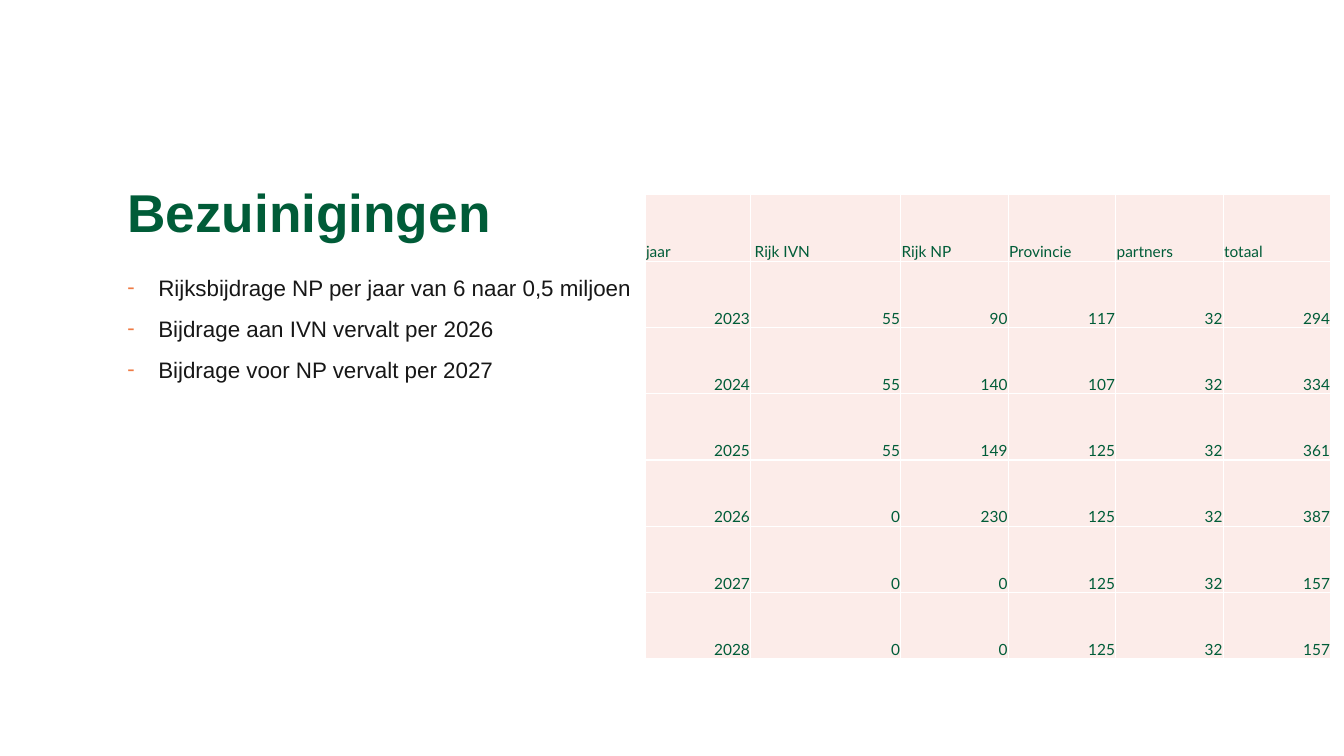
from lxml.etree import SubElement
from pptx import Presentation
from pptx.dml.color import RGBColor
from pptx.enum.text import MSO_ANCHOR as ANCHOR, PP_ALIGN as ALIGN
from pptx.oxml.ns import qn
from pptx.util import Cm, Pt

COLORS = {"green": "005C38", "text": "171717", "orange": "EF7B45",
          "cell": "FCECE9", "border": "FFFFFF"}

POINTS = ["Rijksbijdrage NP per jaar van 6 naar 0,5 miljoen",
          "Bijdrage aan IVN vervalt per 2026",
          "Bijdrage voor NP vervalt per 2027"]

BUDGET = [["jaar", "Rijk IVN", "Rijk NP", "Provincie", "partners", "totaal"],
          [2023, 55, 90, 117, 32, 294],
          [2024, 55, 140, 107, 32, 334],
          [2025, 55, 149, 125, 32, 361],
          [2026, 0, 230, 125, 32, 387],
          [2027, 0, 0, 125, 32, 157],
          [2028, 0, 0, 125, 32, 157]]
COL_WIDTHS = [2.66, 3.78] + [2.71] * 4
ROW_HEIGHT = 1.67


def write(p, text, size=16, font="Arial", color="text", bold=False, align=ALIGN.LEFT):
    p.alignment = align
    r = p.add_run()
    r.text = text
    r.font.size = Pt(size)
    r.font.name = font
    r.font.bold = bold
    r.font.color.rgb = RGBColor.from_string(COLORS[color])


def add_title(s, text):
    title = s.shapes.title
    title.left, title.top, title.width, title.height = Cm(2.95), Cm(3.43), Cm(22.73), Cm(2.84)
    tf = title.text_frame
    tf.vertical_anchor = ANCHOR.BOTTOM
    p = tf.paragraphs[0]
    p.line_spacing = 0.9
    write(p, text, size=38, color="green", bold=True)


def add_dash(p):
    pPr = p._p.get_or_add_pPr()
    pPr.set("marL", str(Cm(0.79)))
    pPr.set("indent", str(-Cm(0.79)))
    color = SubElement(pPr, qn("a:buClr"))
    SubElement(color, qn("a:srgbClr"), val=COLORS["orange"])
    SubElement(pPr, qn("a:buFont"), typeface="Lato")
    SubElement(pPr, qn("a:buChar"), char="-")


def add_points(s, points):
    tf = s.shapes.add_textbox(Cm(2.95), Cm(6.78), Cm(22.73), Cm(8.71)).text_frame
    tf.word_wrap = True
    for i, point in enumerate(points):
        p = tf.paragraphs[0] if i == 0 else tf.add_paragraph()
        p.space_before = Pt(10 if i else 0)
        add_dash(p)
        write(p, point)


def add_borders(cell):
    tcPr = cell._tc.get_or_add_tcPr()
    for side in ("lnL", "lnR", "lnT", "lnB"):
        line = SubElement(tcPr, qn(f"a:{side}"), w=str(Pt(1)))
        fill = SubElement(line, qn("a:solidFill"))
        SubElement(fill, qn("a:srgbClr"), val=COLORS["border"])


def fill_cell(cell, value, margin_left):
    add_borders(cell)
    cell.fill.solid()
    cell.fill.fore_color.rgb = RGBColor.from_string(COLORS["cell"])
    cell.vertical_anchor = ANCHOR.BOTTOM
    cell.margin_left = Cm(margin_left)
    cell.margin_right = cell.margin_top = Cm(0.02)
    cell.margin_bottom = 0
    align = ALIGN.RIGHT if isinstance(value, int) else ALIGN.LEFT
    write(cell.text_frame.paragraphs[0], str(value), size=11, font="Lato",
          color="green", align=align)


def add_budget_table(s, rows):
    table = s.shapes.add_table(len(rows), len(COL_WIDTHS), Cm(16.26), Cm(4.91),
                               Cm(sum(COL_WIDTHS)), Cm(ROW_HEIGHT * len(rows))).table
    table.first_row = table.horz_banding = False
    for column, width in zip(table.columns, COL_WIDTHS):
        column.width = Cm(width)
    for r, values in enumerate(rows):
        table.rows[r].height = Cm(ROW_HEIGHT)
        for c, value in enumerate(values):
            # The "Rijk IVN" heading is slightly indented
            fill_cell(table.cell(r, c), value, 0.1 if (r, c) == (0, 1) else 0.02)


def main():
    prs = Presentation()
    prs.slide_width, prs.slide_height = Cm(33.87), Cm(19.05)
    s = prs.slides.add_slide(prs.slide_layouts.get_by_name("Title Only"))

    # Title and explanation
    add_title(s, "Bezuinigingen")
    add_points(s, POINTS)

    # Contributions per year
    add_budget_table(s, BUDGET)

    prs.save("out.pptx")


if __name__ == "__main__":
    main()
